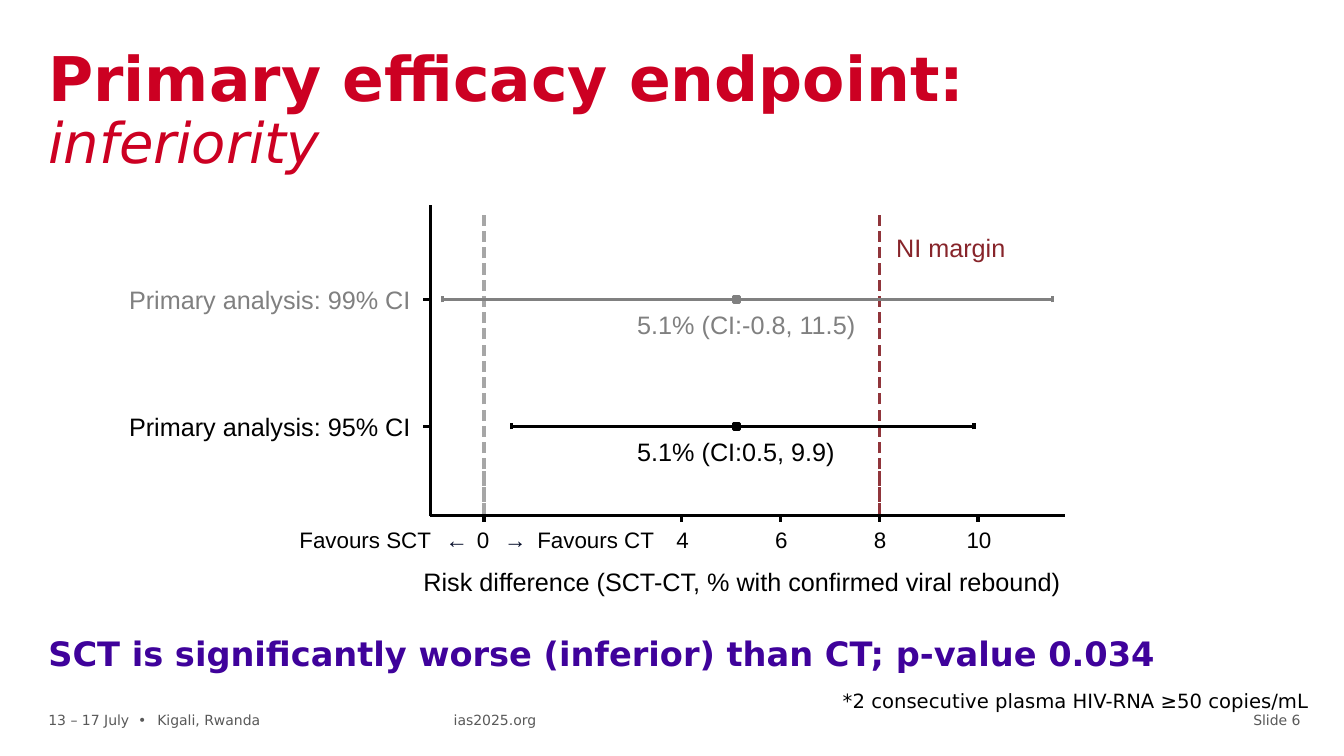
import pptx
import pptx.dml.color
import pptx.enum.shapes
import pptx.enum.text
import pptx.oxml
import pptx.util
import lxml.etree

Inches = pptx.util.Inches
Align = pptx.enum.text.PP_ALIGN
Anchor = pptx.enum.text.MSO_ANCHOR
COLOR = {
    "red": "CC0022", "purple": "3F029B", "wine": "87242A", "margin": "90353B",
    "zero": "A6A6A6", "grey": "808080", "black": "000000", "navy": "040C28",
    "foot": "595959",
}
DRAW = "http://schemas.openxmlformats.org/drawingml/2006/main"


class Page:
    """Holds the style and the current slide."""

    sans = "DejaVu Sans"
    plot = "Arial"
    stroke = 2.25

    def __init__(self, slide):
        self.slide = slide

    def tint(self, name):
        return pptx.dml.color.RGBColor.from_string(COLOR[name])

    def run(self, para, words, size, color, font, bold=False, slant=False):
        run = para.add_run()
        run.text = words
        run.font.size = pptx.util.Pt(size)
        run.font.name = font
        run.font.bold = bold
        run.font.italic = slant
        run.font.color.rgb = self.tint(color)

    def frame(self, shape, wrap, anchor=Anchor.TOP, inset=(0, 0)):
        frame = shape.text_frame
        frame.word_wrap = wrap
        frame.auto_size = pptx.enum.text.MSO_AUTO_SIZE.NONE
        frame.vertical_anchor = anchor
        frame.margin_left = frame.margin_right = Inches(inset[0])
        frame.margin_top = frame.margin_bottom = Inches(inset[1])
        return frame.paragraphs[0]

    def title(self, box, head, tail):
        shape = self.slide.shapes.title
        shape.left, shape.top, shape.width, shape.height = map(Inches, box)
        para = self.frame(shape, True)
        para.alignment = Align.LEFT
        para.line_spacing = 0.9
        self.run(para, head, 44, "red", self.sans, bold=True)
        para.add_line_break()
        self.run(para, tail, 40, "red", self.sans, slant=True)

    def text(self, box, parts, size, font, wrap=False, align=Align.LEFT,
             anchor=Anchor.TOP, inset=(0, 0), bold=False, tabs=()):
        shape = self.slide.shapes.add_textbox(*map(Inches, box))
        para = self.frame(shape, wrap, anchor, inset)
        para.alignment = align
        if tabs:
            stops = lxml.etree.SubElement(
                para._p.get_or_add_pPr(), f"{{{DRAW}}}tabLst")
            for stop in tabs:
                lxml.etree.SubElement(stops, f"{{{DRAW}}}tab",
                                      pos=str(Inches(stop)), algn="l")
        for words, color in parts:
            self.run(para, words, size, color, font, bold)

    def line(self, x1, y1, x2, y2, color):
        line = self.slide.shapes.add_connector(
            pptx.enum.shapes.MSO_CONNECTOR.STRAIGHT,
            *map(Inches, (x1, y1, x2, y2)))
        line.line.color.rgb = self.tint(color)
        line.line.width = pptx.util.Pt(self.stroke)
        lxml.etree.SubElement(line._element.spPr, f"{{{DRAW}}}effectLst")

    def square(self, x, y, side, color):
        shape = self.slide.shapes.add_shape(
            pptx.enum.shapes.MSO_SHAPE.RECTANGLE,
            *map(Inches, (x - side / 2, y - side / 2, side, side)))
        shape.shadow.inherit = False
        shape.fill.solid()
        shape.fill.fore_color.rgb = self.tint(color)
        shape.line.color.rgb = self.tint(color)
        shape.line.width = pptx.util.Pt(self.stroke)

    def dashes(self, x, color):
        step = (5.14 - 2.24) / 18
        starts = [5.1 - step * i for i in range(3)]
        starts += [5.14 - step * i for i in range(19)]
        for y in starts:
            self.line(x, y, x, y - 0.11, color)


def place(value):
    """Turn a risk difference into inches from the left."""
    return 4.8 + 0.49 * value


def main():
    deck = pptx.Presentation()
    deck.slide_width, deck.slide_height = Inches(13.33), Inches(7.5)
    page = Page(deck.slides.add_slide(deck.slide_layouts[5]))

    # Title and main message
    page.title((0.48, 0.48, 9.72, 1.34), "Primary efficacy endpoint:",
               "inferiority")
    page.text((0.48, 6.28, 12.36, 0.67),
              [("SCT is significantly worse (inferior) than CT; p-value 0.034",
                "purple")], 24, page.sans, wrap=True, bold=True)

    # Zero line and margin
    page.dashes(place(0), "zero")
    page.dashes(place(8), "margin")
    page.text((8.79, 2.26, 1.3, 0.4), [("NI margin", "wine")], 18, page.plot,
              inset=(0.1, 0.05))

    # Axes
    left, base = 4.27, 5.11
    page.line(left, base + 0.01, left, 2.03, "black")
    page.line(left, base, 10.56, base, "black")

    # Estimates with their intervals
    rows = [
        (2.97, "99%", -0.84, 11.51, "5.1% (CI:-0.8, 11.5)", 2.18, "grey"),
        (4.23, "95%", 0.55, 9.92, "5.1% (CI:0.5, 9.9)", 1.98, "black"),
    ]
    for y, level, low, high, label, width, color in rows:
        page.line(left, y, left - 0.07, y, "black")
        page.line(place(low), y, place(high), y, color)
        for end in (low, high):
            page.line(place(end), y + 0.03, place(end), y - 0.03, color)
        page.square(place(5.12), y, 0.06, color)
        page.text((1.28, y - 0.15, 2.82, 0.3),
                  [(f"Primary analysis: {level} CI", color)], 18, page.plot)
        page.text((6.32, y + 0.1, width, 0.3), [(label, color)], 18, page.plot)

    # Ticks and their labels
    for value in (0, 4, 6, 8, 10):
        x = place(value)
        page.line(x, 5.1, x, 5.18, "black")
        if value:
            page.text((x - 0.12, 5.22, 0.26, 0.27), [(str(value), "black")],
                      16, page.plot, align=Align.CENTER)
    page.text((2.97, 5.22, 3.57, 0.27),
              [("Favours SCT\t", "black"), ("←\t", "navy"), ("0\t", "black"),
               ("→\t", "navy"), ("Favours CT", "black")],
              16, page.plot, wrap=True, tabs=(1.45, 1.76, 2.03, 2.36))
    page.text((4.2, 5.62, 6.38, 0.3),
              [("Risk difference (SCT-CT, % with confirmed viral rebound)",
                "black")], 18, page.plot)

    # Note and footer
    page.text((8.26, 6.79, 4.92, 0.34),
              [("*2 consecutive plasma HIV-RNA ≥50 copies/mL", "black")],
              14, page.sans, wrap=True, inset=(0.1, 0.05))
    feet = [
        (0.48, 4.02, "13 – 17 July\t•\tKigali, Rwanda", Align.LEFT,
         (0.89, 1.08)),
        (4.5, 1.93, "ias2025.org", Align.LEFT, ()),
        (10.97, 1.93, "Slide 6", Align.RIGHT, ()),
    ]
    for x, width, words, align, tabs in feet:
        page.text((x, 7.02, width, 0.24), [(words, "foot")], 10, page.sans,
                  wrap=True, align=align, anchor=Anchor.MIDDLE, tabs=tabs)

    deck.save("out.pptx")


if __name__ == "__main__":
    main()
